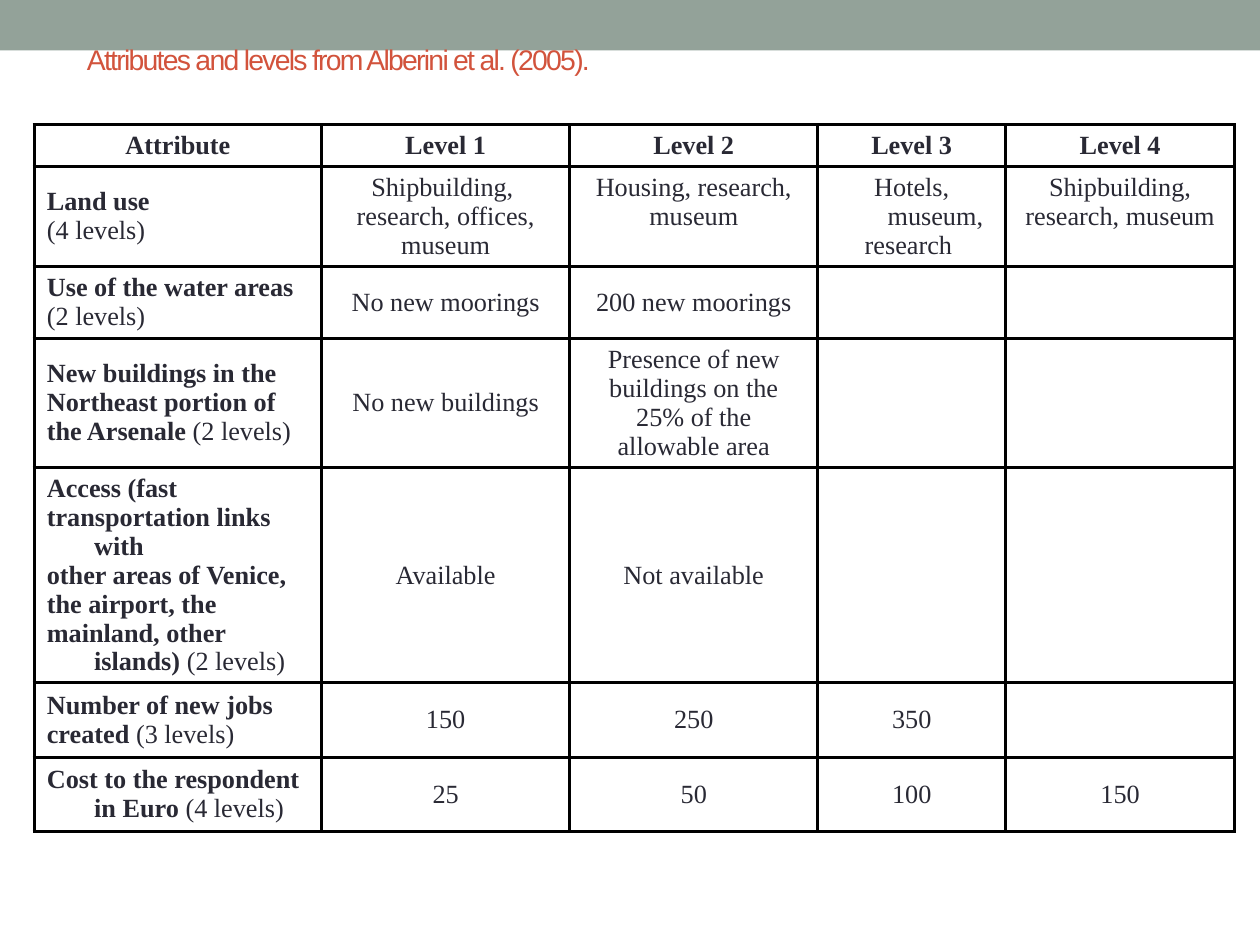
"""Build a slide with the table of attributes and levels of a choice experiment."""
import pptx
import pptx.dml.color
import pptx.enum.shapes
import pptx.enum.text
import pptx.oxml
import pptx.oxml.ns
import pptx.util

Pt = pptx.util.Pt
ANCHOR = pptx.enum.text.MSO_ANCHOR
ALIGN = pptx.enum.text.PP_ALIGN
COLORS = {"band": "93A299", "title": "D2533C", "text": "292934", "border": "000000", "cell": "FFFFFF"}

COLUMN_WIDTHS = [164.2, 141.8, 141.8, 107.3, 130.9]
ROW_HEIGHTS = [23.6, 57.2, 41, 73.8, 123, 42.4, 42.4]
ROWS = [
    ["Attribute", "Level 1", "Level 2", "Level 3", "Level 4"],
    ["Land use\n|(4 levels)", "Shipbuilding, \nresearch, offices,\nmuseum",
     "Housing, research,\nmuseum", "Hotels, museum,\nresearch ", "Shipbuilding,\nresearch, museum"],
    ["Use of the water areas\n|(2 levels)", "No new moorings", "200 new moorings", "", ""],
    ["New buildings in the\nNortheast portion of\nthe Arsenale |(2 levels)", "No new buildings",
     "Presence of new\nbuildings on the\n25% of the\nallowable area", "", ""],
    ["Access (fast\ntransportation links with\nother areas of Venice,\nthe airport, the\n"
     "mainland, other islands) |(2 levels)", "Available", "Not available", "", ""],
    ["Number of new jobs\ncreated |(3 levels)", "150", "250", "350", ""],
    ["Cost to the respondent in Euro |(4 levels)", "25", "50", "100", "150"],
]


def rgb(name):
    return pptx.dml.color.RGBColor.from_string(COLORS[name])


def add_borders(cell):
    properties = cell._tc.get_or_add_tcPr()
    for position, side in enumerate(("lnL", "lnR", "lnT", "lnB")):
        properties.insert(position, pptx.oxml.parse_xml(
            f'<a:{side} {pptx.oxml.ns.nsdecls("a")} w="{Pt(2)}"><a:solidFill>'
            f'<a:srgbClr val="{COLORS["border"]}"/></a:solidFill></a:{side}>'))


presentation = pptx.Presentation()
presentation.slide_width, presentation.slide_height = Pt(720), Pt(540)
slide = presentation.slides.add_slide(presentation.slide_layouts[5])

band = slide.shapes.add_shape(pptx.enum.shapes.MSO_SHAPE.RECTANGLE, 0, 0, Pt(720), Pt(28.8))
band.shadow.inherit = False
band.fill.solid()
band.fill.fore_color.rgb = rgb("band")
band.line.fill.background()
slide.shapes._spTree.insert(2, band._element)

title = slide.shapes.title
title.left, title.top, title.width, title.height = Pt(42.5), Pt(20.2), Pt(648), Pt(27.4)
title.text_frame.text = "Attributes and levels from Alberini et al. (2005)."
title.text_frame.vertical_anchor = ANCHOR.MIDDLE
title.text_frame.auto_size = pptx.enum.text.MSO_AUTO_SIZE.NONE
heading = title.text_frame.paragraphs[0]
heading.alignment = ALIGN.LEFT
heading.font.name, heading.font.size = "Arial", Pt(16.2)
heading.font.color.rgb = rgb("title")
heading.runs[0].font._element.set("spc", "-100")

attributes = slide.shapes.add_table(len(ROWS), len(COLUMN_WIDTHS), Pt(19.6), Pt(71.4),
                                    Pt(sum(COLUMN_WIDTHS)), Pt(sum(ROW_HEIGHTS))).table
attributes.first_row = attributes.horz_banding = False
for column, width in zip(attributes.columns, COLUMN_WIDTHS):
    column.width = Pt(width)
for row, height in zip(attributes.rows, ROW_HEIGHTS):
    row.height = Pt(height)

for r, levels in enumerate(ROWS):
    for c, content in enumerate(levels):
        cell = attributes.cell(r, c)
        cell.fill.solid()
        cell.fill.fore_color.rgb = rgb("cell")
        add_borders(cell)
        top_aligned = r == 0 or (r == 1 and c > 0)
        cell.vertical_anchor = ANCHOR.TOP if top_aligned else ANCHOR.MIDDLE
        cell.text = content.replace("|", "")
        for paragraph, line in zip(cell.text_frame.paragraphs, content.split("\n")):
            paragraph.alignment = ALIGN.LEFT if c == 0 and r > 0 else ALIGN.CENTER
            paragraph._p.get_or_add_pPr().set("marL", str(Pt(27)))
            paragraph._p.get_or_add_pPr().set("indent", str(Pt(-27)))
            paragraph.font.name, paragraph.font.size = "Times New Roman", Pt(15)
            paragraph.font.color.rgb = rgb("text")
            name, _, count = line.partition("|")
            paragraph.clear()
            for part, bold in ((name, r == 0 or c == 0), (count, False)):
                if part:
                    run = paragraph.add_run()
                    run.text, run.font.bold = part, bold

presentation.save("out.pptx")
